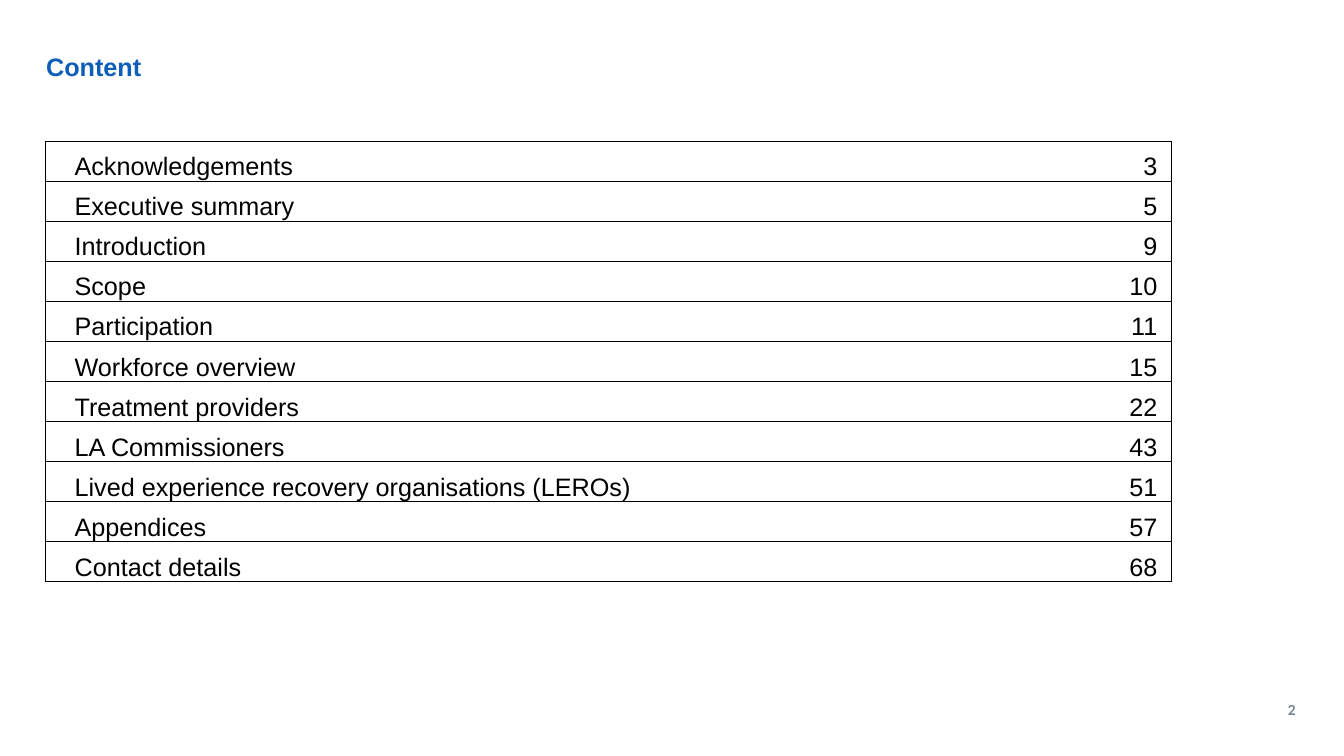
import pptx
import pptx.dml.color
import pptx.enum.text
import pptx.oxml
import pptx.oxml.ns
import pptx.util
from pptx.util import Inches

BLACK = pptx.dml.color.RGBColor(0x00, 0x00, 0x00)
BLUE = pptx.dml.color.RGBColor(0x0D, 0x5E, 0xB8)
GREY = pptx.dml.color.RGBColor(0x76, 0x86, 0x91)
ALIGN = pptx.enum.text.PP_ALIGN
ANCHOR = pptx.enum.text.MSO_ANCHOR

SECTIONS = [
    ("Acknowledgements", 3),
    ("Executive summary", 5),
    ("Introduction", 9),
    ("Scope", 10),
    ("Participation", 11),
    ("Workforce overview", 15),
    ("Treatment providers", 22),
    ("LA Commissioners", 43),
    ("Lived experience recovery organisations (LEROs)", 51),
    ("Appendices", 57),
    ("Contact details", 68),
]
COLUMN_WIDTHS = [5.29, 1.47, 1.47, 1.47, 1.47]
LAST_COLUMN = len(COLUMN_WIDTHS) - 1
TABLE_HEIGHT = 4.37


def add_label(page, text, place, size, font_name, color, align):
    box = page.shapes.add_textbox(*[Inches(length) for length in place])
    box.text_frame.word_wrap = True
    box.text_frame.vertical_anchor = ANCHOR.MIDDLE
    para = box.text_frame.paragraphs[0]
    para.text = text
    para.alignment = align
    para.font.size = pptx.util.Pt(size)
    para.font.name = font_name
    para.font.bold = True
    para.font.color.rgb = color
    return para


def set_borders(cell, visible_sides):
    """Draw thin black lines on the given sides (L, R, T, B) and none elsewhere."""
    properties = cell._tc.get_or_add_tcPr()
    for side in "LRTB":
        paint = "<a:noFill/>"
        if side in visible_sides:
            paint = f'<a:solidFill><a:srgbClr val="{BLACK}"/></a:solidFill>'
        namespace = pptx.oxml.ns.nsdecls("a")
        properties.append(pptx.oxml.parse_xml(
            f'<a:ln{side} {namespace} w="6350">{paint}</a:ln{side}>'))


deck = pptx.Presentation()
deck.slide_width = Inches(13.33)
deck.slide_height = Inches(7.5)
page = deck.slides.add_slide(deck.slide_layouts[6])

title = add_label(page, "Content", (0.36, 0.42, 12.6, 0.52), 18, "Arial", BLUE, ALIGN.LEFT)
title.line_spacing = 0.9

contents = page.shapes.add_table(
    len(SECTIONS), len(COLUMN_WIDTHS), Inches(0.45), Inches(1.4),
    Inches(sum(COLUMN_WIDTHS)), Inches(TABLE_HEIGHT)).table
contents.first_row = False
contents.horz_banding = False
for column, width in zip(contents.columns, COLUMN_WIDTHS):
    column.width = Inches(width)

for row_index, (section, page_number) in enumerate(SECTIONS):
    contents.rows[row_index].height = Inches(TABLE_HEIGHT / len(SECTIONS))
    for column_index in range(len(COLUMN_WIDTHS)):
        cell = contents.cell(row_index, column_index)
        cell.margin_left = cell.margin_right = cell.margin_top = cell.margin_bottom = 0
        cell.vertical_anchor = ANCHOR.BOTTOM
        sides = "TB"
        para = cell.text_frame.paragraphs[0]
        if column_index == 0:
            sides = "LTB"
            cell.margin_left = Inches(0.29)
            para.text = section
        elif column_index == LAST_COLUMN:
            sides = "RTB"
            cell.margin_right = Inches(0.14)
            para.text = str(page_number)
            para.alignment = ALIGN.RIGHT
        para.font.size = pptx.util.Pt(18)
        para.font.name = "Arial"
        para.font.color.rgb = BLACK
        set_borders(cell, sides)
        cell.fill.background()

# The longest section name runs over two columns
lero_row = [section for section, _ in SECTIONS].index(
    "Lived experience recovery organisations (LEROs)")
contents.cell(lero_row, 0).merge(contents.cell(lero_row, 1))

add_label(page, "2", (10.59, 6.84, 2.36, 0.4), 11, "Calibri", GREY, ALIGN.RIGHT)

deck.save("out.pptx")
